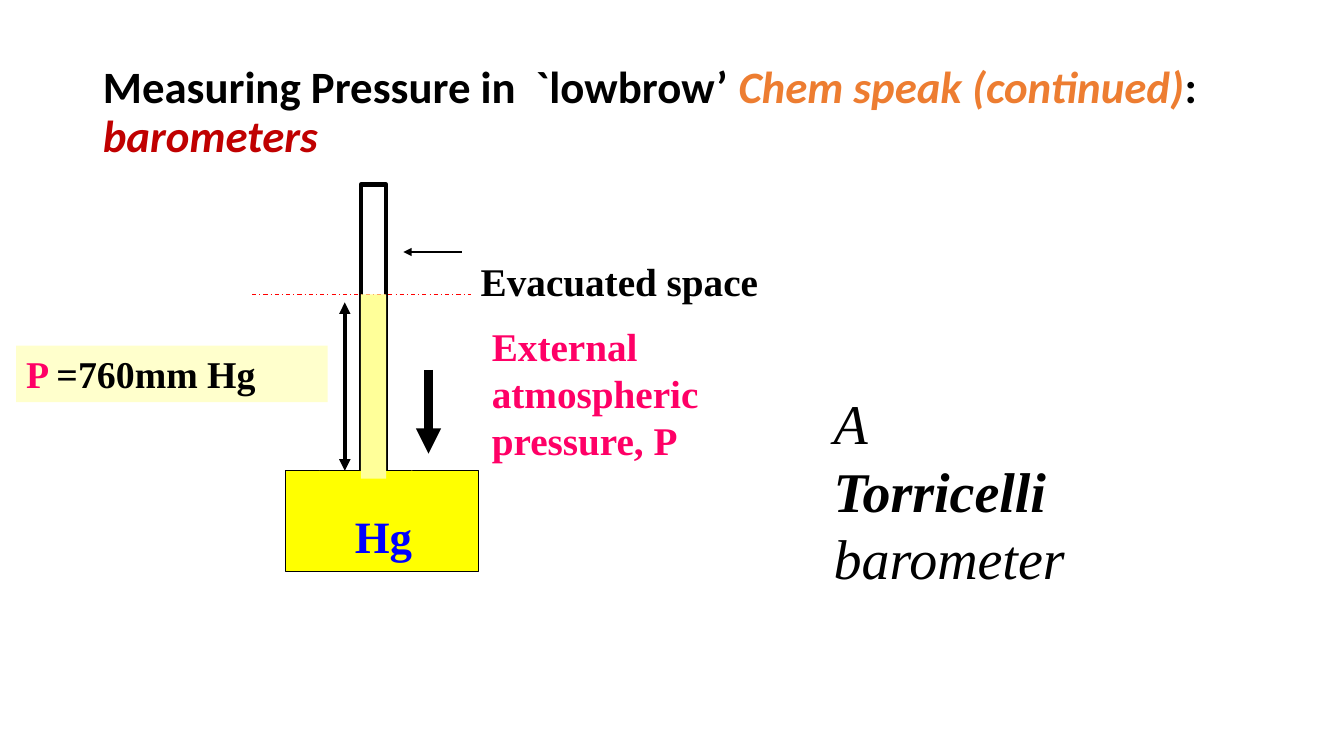
"""Build a slide that explains a mercury barometer."""
from dataclasses import dataclass

from pptx import Presentation
from pptx.dml.color import RGBColor
from pptx.enum.dml import MSO_LINE
from pptx.enum.shapes import MSO_CONNECTOR, MSO_SHAPE
from pptx.enum.text import MSO_ANCHOR, MSO_AUTO_SIZE, PP_ALIGN
from pptx.oxml.ns import qn
from pptx.util import Inches, Pt
from lxml import etree

RECT = MSO_SHAPE.RECTANGLE
STRAIGHT = MSO_CONNECTOR.STRAIGHT
DASH_DOT = MSO_LINE.DASH_DOT
TOP, MIDDLE = MSO_ANCHOR.TOP, MSO_ANCHOR.MIDDLE
LEFT = PP_ALIGN.LEFT
GROW, FIXED = MSO_AUTO_SIZE.SHAPE_TO_FIT_TEXT, MSO_AUTO_SIZE.NONE


@dataclass(frozen=True)
class Theme:
    """Colours, fonts and type sizes of the slide."""
    black: str = "000000"
    orange: str = "ED7D31"
    brick: str = "C00000"
    red: str = "FF0000"
    pink: str = "FF0066"
    blue: str = "0000FF"
    yellow: str = "FFFF00"
    cream: str = "FFFFCC"
    pale: str = "FFFF99"
    head: str = "Calibri"
    body: str = "Times New Roman"
    title: int = 32
    label: int = 28
    value: int = 27
    large: int = 40
    thin: float = 0.75


def add_run(para, text, font, size, color, bold=False, italic=False):
    """Add a formatted run to a paragraph."""
    run = para.add_run()
    run.text = text
    run.font.name = font
    run.font.size = Pt(size)
    run.font.color.rgb = RGBColor.from_string(color)
    run.font.bold = bold
    run.font.italic = italic


class Board:
    """Draw elements on one slide in one style."""

    def __init__(self, slide, theme):
        """Keep the slide and its theme."""
        self.slide = slide
        self.theme = theme

    def title(self, box, parts):
        """Place and fill the title; the last part starts a new line."""
        shape = self.slide.shapes.title
        shape.left, shape.top, shape.width, shape.height = map(Inches, box)
        frame = shape.text_frame
        frame.word_wrap = True
        frame.auto_size = FIXED
        frame.vertical_anchor = MIDDLE
        para = frame.paragraphs[0]
        para.alignment = LEFT
        para.line_spacing = 0.9
        for text, form in parts[:-1]:
            add_run(para, text, self.theme.head, self.theme.title, **form)
        para.add_line_break()
        text, form = parts[-1]
        add_run(para, text, self.theme.head, self.theme.title, **form)

    def rect(self, box, fill=None, line=None):
        """Draw a rectangle with an optional fill and black outline."""
        shape = self.slide.shapes.add_shape(RECT, *map(Inches, box))
        shape.shadow.inherit = False
        if fill:
            shape.fill.solid()
            shape.fill.fore_color.rgb = RGBColor.from_string(fill)
        else:
            shape.fill.background()
        if line:
            shape.line.color.rgb = RGBColor.from_string(self.theme.black)
            shape.line.width = Pt(line)
        else:
            shape.line.fill.background()
        return shape

    def text(self, box, size, parts, fill=None):
        """Write a label, on a filled rectangle if a fill is given."""
        if fill:
            shape = self.rect(box, fill)
        else:
            shape = self.slide.shapes.add_textbox(*map(Inches, box))
        frame = shape.text_frame
        frame.word_wrap = True
        frame.auto_size = GROW
        frame.vertical_anchor = TOP
        para = frame.paragraphs[0]
        para.alignment = LEFT
        space = etree.SubElement(para._p.get_or_add_pPr(), qn("a:spcBef"))
        etree.SubElement(space, qn("a:spcPct"), val="50000")
        for text, form in parts:
            add_run(para, text, self.theme.body, size, **form)

    def line(self, start, end, width, color=None, dash=None, heads=()):
        """Draw a straight line with optional dashes and arrowheads."""
        link = self.slide.shapes.add_connector(
            STRAIGHT, *map(Inches, (*start, *end)))
        link.line.color.rgb = RGBColor.from_string(color or self.theme.black)
        link.line.width = Pt(width)
        if dash:
            link.line.dash_style = dash
        props = link._element.spPr
        for head in heads:
            etree.SubElement(props.find(qn("a:ln")), qn(head), type="triangle")
        etree.SubElement(props, qn("a:effectLst"))


def main():
    """Build and save the slide."""
    deck = Presentation()
    deck.slide_width, deck.slide_height = Inches(13.33), Inches(7.5)
    look = Theme()
    board = Board(deck.slides.add_slide(deck.slide_layouts[5]), look)

    black = {"color": look.black, "bold": True}
    pink = {"color": look.pink, "bold": True}
    board.title((0.92, 0.4, 11.5, 1.45), [
        ("Measuring Pressure in  `lowbrow’ ", black),
        ("Chem speak (continued)",
         {"color": look.orange, "bold": True, "italic": True}),
        (":", black),
        ("barometers", {"color": look.brick, "bold": True, "italic": True}),
    ])

    left, wide, top = 3.58, 0.25, 1.83
    right = left + wide
    pool, level = 4.67, 2.92
    board.rect((left, top, wide, 3.42), line=3.25)
    board.rect((2.83, pool, 1.92, 1), look.yellow, look.thin)
    board.rect((3.17, pool, 0.92, 0.17), look.yellow)
    board.line((3.17, pool), (left, pool), look.thin)
    board.line((4.08, pool), (right, pool), look.thin)

    board.line((4.58, 2.5), (4, 2.5), look.thin, heads=["a:tailEnd"])
    board.text((4.67, 2.5, 3.5, 0.57), look.label,
               [("Evacuated space", black)])
    board.line((2.5, level), (4.67, level), look.thin, look.red, DASH_DOT)
    board.text((0.16, 3.43, 3.09, 0.56), look.value,
               [("P ", pink), ("=760mm Hg", black)], look.cream)
    board.line((4.25, 3.67), (4.25, 4.5), 6, heads=["a:tailEnd"])
    board.text((4.78, 3.15, 2.83, 1.51), look.label,
               [("External atmospheric pressure, P", pink)])
    board.text((3.42, 5, 0.88, 0.64), look.title,
               [("Hg", {"color": look.blue, "bold": True})])
    board.line((left, top), (right, top), 3)

    slant = {"color": look.black, "italic": True}
    board.text((8.17, 3.81, 2.75, 2.12), look.large, [
        ("A ", slant),
        ("Torricelli ", {**slant, "bold": True}),
        ("barometer", slant),
    ])
    board.line((3.42, pool), (3.42, 3), 2.75,
               heads=["a:headEnd", "a:tailEnd"])
    board.rect((left, level, wide, 1.83), look.pale)
    deck.save("out.pptx")


if __name__ == "__main__":
    main()
